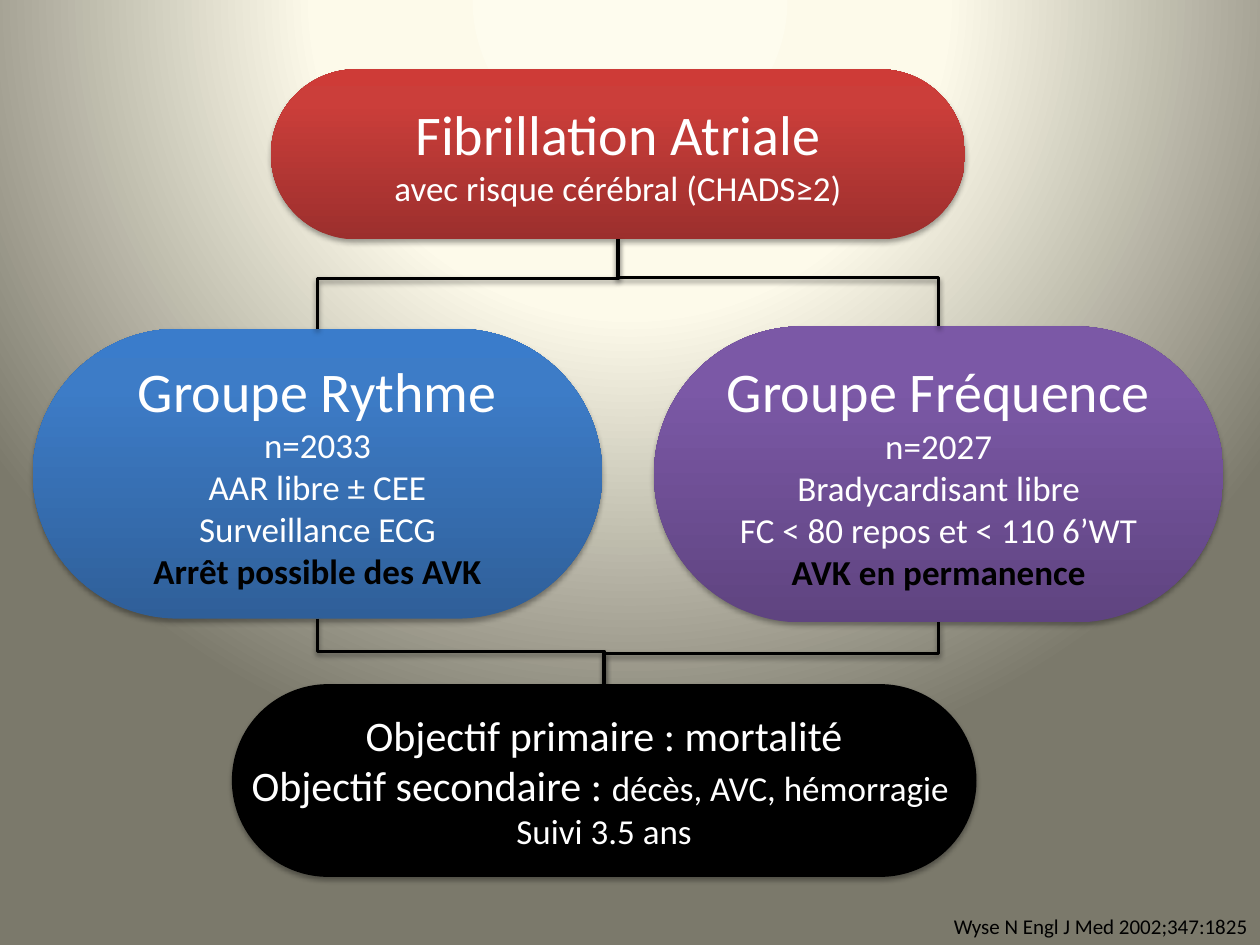
from pptx import Presentation
from pptx.dml.color import RGBColor as RGB
from pptx.enum.shapes import MSO_CONNECTOR as LINK, MSO_SHAPE as SHAPE
from pptx.enum.text import MSO_ANCHOR as ANCHOR, PP_ALIGN as ALIGN
from pptx.oxml import parse_xml
from pptx.oxml.ns import nsdecls
from pptx.util import Inches, Pt

HEX = {"white": "FFFFFF", "black": "000000"}
GRADS = {
    "red": [(0, "9C2F2D"), (80, "CB3E3A"), (100, "CE3B37")],
    "blue": [(0, "2F5F99"), (80, "3D7CC7"), (100, "3A7CCB")],
    "purple": [(0, "5F4480"), (80, "7B58A6"), (100, "7C57A8")],
    "back": [(0, "FEFCEE"), (40, "FDFAEA"), (100, "7B796B")],
}
UP = '<a:lin ang="16200000" scaled="0"/>'
GLOW = ('<a:path path="circle"><a:fillToRect l="50000" t="-80000" '
        'r="50000" b="180000"/></a:path>')

HEAD = {"size": 32}
BODY = {"size": 20}
GOAL = {"size": 24}
NOTE = {"size": 20, "bold": True, "color": "black"}

# name: place, fill, side and top margins, paragraphs of (text, format) runs
BOXES = {
    "title": ((2.15, 0.55, 5.51, 1.35), "red", (0.05, 0.03), [
        [("Fibrillation Atriale", HEAD)],
        [("avec risque cérébral (CHADS≥2)", BODY)]]),
    "rhythm": ((0.26, 2.61, 4.52, 2.3), "blue", (0.05, 0.03), [
        [("Groupe Rythme", HEAD)],
        [("n=2033", BODY)],
        [("AAR libre ± CEE", BODY)],
        [("Surveillance ECG", BODY)],
        [("Arrêt possible des AVK", NOTE)]]),
    "rate": ((5.19, 2.59, 4.52, 2.35), "purple", (0.05, 0.03), [
        [("Groupe Fréquence", HEAD)],
        [("n=2027", BODY)],
        [("Bradycardisant libre", BODY)],
        [("FC < 80 repos et < 110 6’WT", BODY)],
        [("AVK en permanence", NOTE)]]),
    "goal": ((1.84, 5.43, 5.91, 1.53), "black", (0.08, 0.04), [
        [("Objectif primaire : mortalité", GOAL)],
        [("Objectif secondaire : ", GOAL), ("décès, AVC, hémorragie ", BODY)],
        [("Suivi 3.5 ans", BODY)]]),
}
# upper box, lower box, height of the bend as a share of the gap
LINKS = [("title", "rhythm", 0.44), ("title", "rate", 0.44),
         ("rhythm", "goal", 0.5), ("rate", "goal", 0.5)]
SOURCE = "Wyse N Engl J Med 2002;347:1825"


def grad(name, way):
    stops = "".join(f'<a:gs pos="{pos * 1000}"><a:srgbClr val="{tone}"/></a:gs>'
                    for pos, tone in GRADS[name])
    return (f'<a:gradFill {nsdecls("a")} rotWithShape="1">'
            f'<a:gsLst>{stops}</a:gsLst>{way}</a:gradFill>')


def shade(part, dist, alpha):
    """Give a shape or connector a soft shadow straight below it."""
    part._element.spPr.append(parse_xml(
        f'<a:effectLst {nsdecls("a")}><a:outerShdw blurRad="{Pt(3.1)}" '
        f'dist="{Pt(dist)}" dir="5400000" rotWithShape="0">'
        f'<a:srgbClr val="{HEX["black"]}"><a:alpha val="{alpha * 1000}"/>'
        '</a:srgbClr></a:outerShdw></a:effectLst>'))


def write(para, runs, align):
    para.alignment = align
    for text, form in runs:
        run = para.add_run()
        run.text = text
        look = {"name": "Calibri", "color": "white", **form}
        run.font.color.rgb = RGB.from_string(HEX[look.pop("color")])
        look["size"] = Pt(look["size"])
        for key, val in look.items():
            setattr(run.font, key, val)


def add_box(slide, place, fill, pads, paras):
    box = slide.shapes.add_shape(SHAPE.ROUNDED_RECTANGLE, *map(Inches, place))
    box.adjustments[0] = 0.5
    box.line.fill.background()
    box.fill.solid()
    box.fill.fore_color.rgb = RGB.from_string(HEX["black"])
    if fill in GRADS:
        props = box._element.spPr
        props.replace(props.solidFill, parse_xml(grad(fill, UP)))
    shade(box, 1.8, 35)
    frame = box.text_frame
    side, top = map(Inches, pads)
    form = {"word_wrap": False, "vertical_anchor": ANCHOR.MIDDLE,
            "margin_left": side, "margin_right": side,
            "margin_top": top, "margin_bottom": top}
    for key, val in form.items():
        setattr(frame, key, val)
    for i, runs in enumerate(paras):
        write(frame.add_paragraph() if i else frame.paragraphs[0],
              runs, ALIGN.CENTER)
    return box


def add_link(slide, upper, lower, bend):
    """Join two boxes by an elbow that leaves downwards."""
    link = slide.shapes.add_connector(LINK.ELBOW, 0, 0, 0, 0)
    link.begin_connect(upper, 2)
    link.end_connect(lower, 0)
    x1, y1, x2, y2 = link.begin_x, link.begin_y, link.end_x, link.end_y
    long, wide = y2 - y1, abs(x2 - x1)
    # The elbow is laid out sideways, then turned a quarter about its centre
    link.left, link.top = (x1 + x2 - long) // 2, (y1 + y2 - wide) // 2
    link.width, link.height = long, wide
    props = link._element.spPr
    props.xfrm.flipH = False
    props.xfrm.flipV = x2 > x1
    props.xfrm.set("rot", "5400000")
    props.prstGeom.get_or_add_avLst().append(parse_xml(
        f'<a:gd {nsdecls("a")} name="adj1" fmla="val {round(bend * 100000)}"/>'))
    link.line.color.rgb = RGB.from_string(HEX["black"])
    link.line.width = Pt(2)
    shade(link, 1.6, 38)


def main():
    deck = Presentation()
    deck.slide_width, deck.slide_height = Inches(10), Inches(7.5)
    slide = deck.slides.add_slide(deck.slide_layouts[6])
    slide._element.cSld.insert(0, parse_xml(
        f'<p:bg {nsdecls("p", "a")}><p:bgPr>{grad("back", GLOW)}'
        '<a:effectLst/></p:bgPr></p:bg>'))

    boxes = {name: add_box(slide, *data) for name, data in BOXES.items()}
    for upper, lower, bend in LINKS:
        add_link(slide, boxes[upper], boxes[lower], bend)

    note = slide.shapes.add_textbox(*map(Inches, (6.25, 7.2, 3.75, 0.3)))
    note.text_frame.word_wrap = True
    write(note.text_frame.paragraphs[0],
          [(SOURCE, {"size": 12, "color": "black"})], ALIGN.RIGHT)
    deck.save("out.pptx")


if __name__ == "__main__":
    main()
